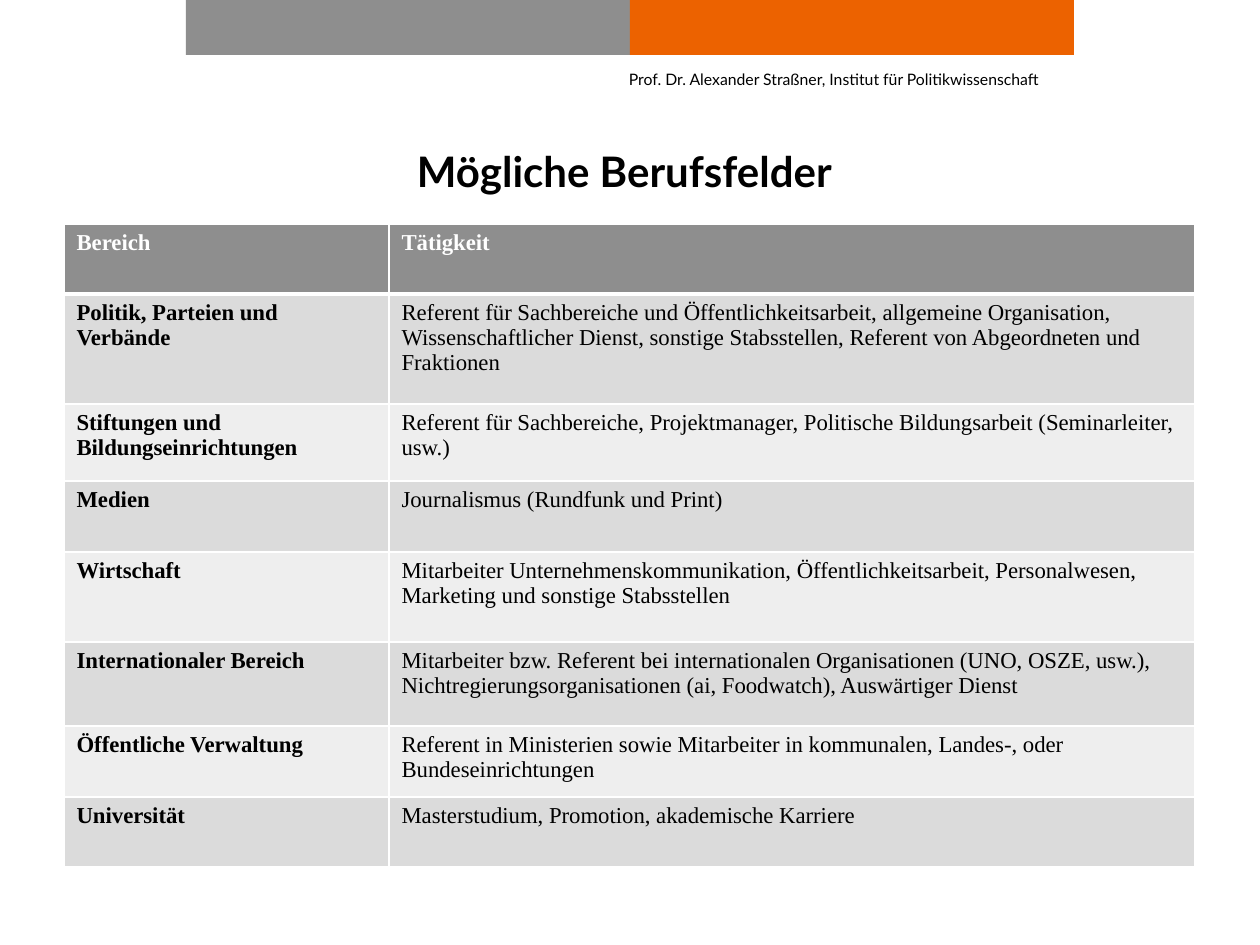
from lxml import etree
from pptx import Presentation
from pptx.dml.color import RGBColor
from pptx.enum.shapes import MSO_SHAPE
from pptx.enum.text import MSO_ANCHOR, PP_ALIGN
from pptx.oxml.ns import qn
from pptx.util import Pt

RECTANGLE = MSO_SHAPE.RECTANGLE
MIDDLE = MSO_ANCHOR.MIDDLE
CENTER = PP_ALIGN.CENTER
TITLE_ONLY = 5
EMU_PER_PX = 914400 // 126
SLIDE_SIZE = (1260, 945)

COLORS = {
    "gray": "8E8E8E",
    "orange": "EC6200",
    "dark_band": "DBDBDB",
    "light_band": "EEEEEE",
    "white": "FFFFFF",
    "black": "000000",
}
TITLE_FORMAT = {"name": "Lato", "size": Pt(24), "bold": True}
AUTHOR_FORMAT = {"name": "Lato", "size": Pt(9), "bold": False}
BOLD_CELL = {"name": "Times New Roman", "size": Pt(13), "bold": True}
PLAIN_CELL = {**BOLD_CELL, "bold": False}

COLUMN_WIDTHS = (325, 806)
ROWS = [
    (70, "Bereich", "Tätigkeit"),
    (110, "Politik, Parteien und Verbände",
     "Referent für Sachbereiche und Öffentlichkeitsarbeit, allgemeine Organisation, "
     "Wissenschaftlicher Dienst, sonstige Stabsstellen, Referent von Abgeordneten und Fraktionen"),
    (77, "Stiftungen und Bildungseinrichtungen",
     "Referent für Sachbereiche, Projektmanager, Politische Bildungsarbeit (Seminarleiter, usw.)"),
    (71, "Medien", "Journalismus (Rundfunk und Print)"),
    (90, "Wirtschaft",
     "Mitarbeiter Unternehmenskommunikation, Öffentlichkeitsarbeit, Personalwesen, "
     "Marketing und sonstige Stabsstellen"),
    (84, "Internationaler Bereich",
     "Mitarbeiter bzw. Referent bei internationalen Organisationen (UNO, OSZE, usw.), "
     "Nichtregierungsorganisationen (ai, Foodwatch), Auswärtiger Dienst"),
    (71, "Öffentliche Verwaltung",
     "Referent in Ministerien sowie Mitarbeiter in kommunalen, Landes-, oder Bundeseinrichtungen"),
    (70, "Universität", "Masterstudium, Promotion, akademische Karriere"),
]


def px(*lengths):
    """Turn pixel lengths into EMU."""
    return [length * EMU_PER_PX for length in lengths]


def rgb(color):
    return RGBColor.from_string(COLORS[color])


def format_paragraph(paragraph, font_format, color="black"):
    for attribute, value in font_format.items():
        setattr(paragraph.font, attribute, value)
    paragraph.font.color.rgb = rgb(color)


def fill_frame(frame, text, font_format, line_spacing):
    """Write one paragraph into a text frame without insets."""
    frame.word_wrap = True
    for side in ("left", "top", "right", "bottom"):
        setattr(frame, f"margin_{side}", 0)
    frame.text = text
    paragraph = frame.paragraphs[0]
    paragraph.line_spacing = line_spacing
    format_paragraph(paragraph, font_format)
    return paragraph


def add_top_band(slide, left, top, width, height):
    half = width // 2
    for index, color in enumerate(("gray", "orange")):
        band = slide.shapes.add_shape(RECTANGLE, *px(left + index * half, top, half, height))
        band.shadow.inherit = False
        band.fill.solid()
        band.fill.fore_color.rgb = rgb(color)
        band.line.fill.background()


def add_author(slide, left, top, width, height):
    box = slide.shapes.add_textbox(*px(left, top, width, height))
    fill_frame(box.text_frame, "Prof. Dr. Alexander Straßner, Institut für Politikwissenschaft",
               AUTHOR_FORMAT, Pt(10))


def place_title(slide, left, top, width, height):
    title = slide.shapes.title
    title.left, title.top, title.width, title.height = px(left, top, width, height)
    paragraph = fill_frame(title.text_frame, "Mögliche Berufsfelder ", TITLE_FORMAT, Pt(26))
    paragraph.alignment = CENTER
    title.text_frame.vertical_anchor = MIDDLE


def set_borders(cell, widths):
    """Draw white borders, with widths in points by side."""
    properties = cell._tc.get_or_add_tcPr()
    for index, (side, width) in enumerate(widths.items()):
        line = etree.Element(qn(f"a:ln{side}"), w=str(Pt(width)))
        fill = etree.SubElement(line, qn("a:solidFill"))
        etree.SubElement(fill, qn("a:srgbClr"), val=COLORS["white"])
        properties.insert(index, line)


def add_career_table(slide, left, top):
    width, height = sum(COLUMN_WIDTHS), sum(row[0] for row in ROWS)
    frame = slide.shapes.add_table(len(ROWS), len(COLUMN_WIDTHS), *px(left, top, width, height))
    table = frame.table
    for column, column_width in zip(table.columns, px(*COLUMN_WIDTHS)):
        column.width = column_width
    for row_index, (row_height, *texts) in enumerate(ROWS):
        table.rows[row_index].height = row_height * EMU_PER_PX
        is_header = row_index == 0
        band = "dark_band" if row_index % 2 else "light_band"
        borders = {"L": 1, "R": 1, "T": 3 if row_index == 1 else 1, "B": 3 if is_header else 1}
        for column_index, text in enumerate(texts):
            cell = table.cell(row_index, column_index)
            cell.text = text
            cell.fill.solid()
            cell.fill.fore_color.rgb = rgb("gray" if is_header else band)
            font_format = BOLD_CELL if is_header or column_index == 0 else PLAIN_CELL
            format_paragraph(cell.text_frame.paragraphs[0], font_format,
                             "white" if is_header else "black")
            set_borders(cell, borders)


def main():
    presentation = Presentation()
    presentation.slide_width, presentation.slide_height = px(*SLIDE_SIZE)
    slide = presentation.slides.add_slide(presentation.slide_layouts[TITLE_ONLY])
    add_top_band(slide, 186, 0, 888, 55)
    place_title(slide, 185, 125, 888, 96)
    add_career_table(slide, 64, 224)
    add_author(slide, 629, 71, 445, 67)
    presentation.save("out.pptx")


if __name__ == "__main__":
    main()
